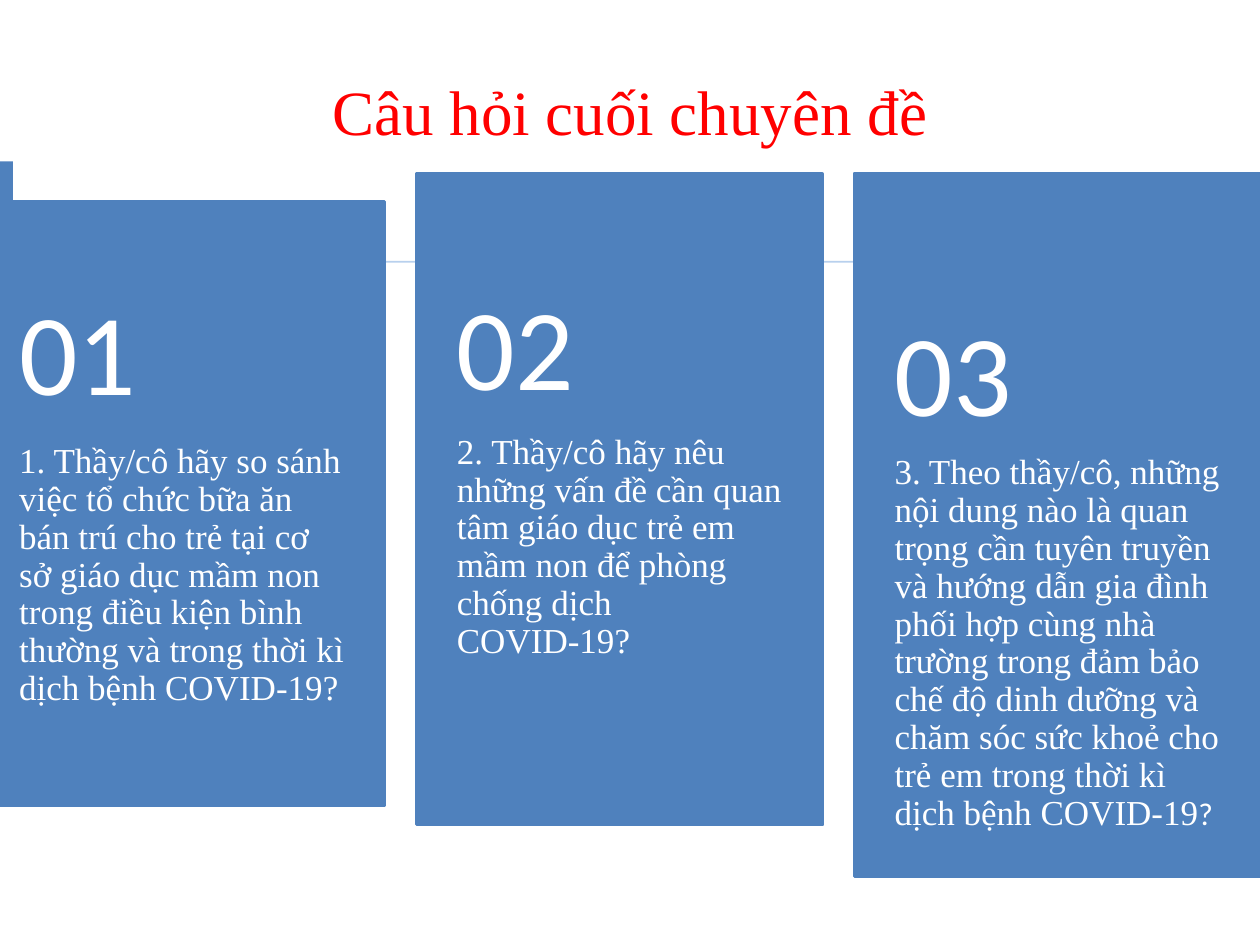
from dataclasses import dataclass

from pptx import Presentation
from pptx.dml.color import RGBColor
from pptx.enum.shapes import MSO_SHAPE
from pptx.enum.text import MSO_ANCHOR, PP_ALIGN
from pptx.slide import Slide
from pptx.text.text import TextFrame, _Run
from pptx.util import Emu, Inches, Pt

RECTANGLE = MSO_SHAPE.RECTANGLE
TOP, MIDDLE = MSO_ANCHOR.TOP, MSO_ANCHOR.MIDDLE
LEFT, CENTER = PP_ALIGN.LEFT, PP_ALIGN.CENTER

COLUMNS, ROWS = 1000, 750
SLIDE_WIDTH, SLIDE_HEIGHT = Inches(10), Inches(7.5)
BLUE, PALE_BLUE, WHITE, RED = "4F81BD", "B8D0ED", "FFFFFF", "FF0000"
SERIF, SANS = "Times New Roman", "Calibri"
CARD_WIDTH, FIRST_CARD, CARD_PITCH = 322, -16.8, 347.4
LEFT_INSET, RIGHT_INSET, NUMBER_INSET, QUESTION_INSET = 32, 31, 18, 36


@dataclass(frozen=True)
class Box:
    column: float
    row: float
    columns: float
    rows: float

    def emu(self) -> tuple[Emu, Emu, Emu, Emu]:
        return across(self.column), down(self.row), across(self.columns), down(self.rows)


@dataclass(frozen=True)
class Card:
    question: str
    top: float
    height: float
    number_top: float
    number_height: float
    question_top: float
    ending: str = ""


CARDS = (
    Card("1. Thầy/cô hãy so sánh việc tổ chức bữa ăn bán trú cho trẻ tại cơ sở giáo dục "
         "mầm non trong điều kiện bình thường và trong thời kì dịch bệnh COVID-19?",
         160, 479, 138, 293, 352),
    Card("2. Thầy/cô hãy nêu những vấn đề cần quan tâm giáo dục trẻ em mầm non "
         "để phòng chống dịch COVID-19?",
         138, 516.5, 203, 154, 344.5),
    Card("3. Theo thầy/cô, những nội dung nào là quan trọng cần tuyên truyền và hướng dẫn "
         "gia đình phối hợp cùng nhà trường trong đảm bảo chế độ dinh dưỡng và chăm sóc "
         "sức khoẻ cho trẻ em trong thời kì dịch bệnh COVID-19",
         138, 557.5, 224, 154, 360.8, "?"),
)


def across(columns: float) -> Emu:
    return Emu(round(SLIDE_WIDTH * columns / COLUMNS))


def down(rows: float) -> Emu:
    return Emu(round(SLIDE_HEIGHT * rows / ROWS))


def color(code: str) -> RGBColor:
    return RGBColor.from_string(code)


def format_run(run: _Run, size: float, font: str, code: str) -> None:
    run.font.size = Pt(size)
    run.font.name = font
    run.font.color.rgb = color(code)


def add_block(slide: Slide, box: Box, fill: str, outlined: bool = False) -> None:
    block = slide.shapes.add_shape(RECTANGLE, *box.emu())
    block.shadow.inherit = False
    block.fill.solid()
    block.fill.fore_color.rgb = color(fill)
    if outlined:
        block.line.color.rgb = color(fill)
        block.line.width = Pt(2)
    else:
        block.line.fill.background()


def add_text(slide: Slide, box: Box, text: str, size: float, font: str,
             anchor: MSO_ANCHOR, top_inset: float, bottom_inset: float) -> TextFrame:
    frame = slide.shapes.add_textbox(*box.emu()).text_frame
    frame.word_wrap = True
    frame.vertical_anchor = anchor
    frame.margin_left, frame.margin_right = across(LEFT_INSET), across(RIGHT_INSET)
    frame.margin_top, frame.margin_bottom = down(top_inset), down(bottom_inset)
    frame.text = text
    paragraph = frame.paragraphs[0]
    paragraph.alignment = LEFT
    paragraph.line_spacing = 0.9
    format_run(paragraph.runs[0], size, font, WHITE)
    return frame


def add_card(slide: Slide, index: int, card: Card) -> None:
    left = FIRST_CARD + index * CARD_PITCH
    add_block(slide, Box(left, card.top, CARD_WIDTH, card.height), BLUE, outlined=True)
    question_height = card.top + card.height - card.question_top
    question = add_text(slide, Box(left, card.question_top, CARD_WIDTH, question_height),
                        card.question, 20, SERIF, TOP, 0, QUESTION_INSET)
    if card.ending:
        ending = question.paragraphs[0].add_run()
        ending.text = card.ending
        format_run(ending, 18, SANS, WHITE)
    add_text(slide, Box(left, card.number_top, CARD_WIDTH, card.number_height),
             f"{index + 1:02}", 66, SANS, MIDDLE, NUMBER_INSET, NUMBER_INSET)


def add_title(slide: Slide, text: str) -> None:
    title = slide.shapes.title
    title.left, title.top, title.width, title.height = Box(68.75, 33.5, 862.5, 108).emu()
    title.text_frame.text = text
    title.text_frame.vertical_anchor = MIDDLE
    heading = title.text_frame.paragraphs[0]
    heading.alignment = CENTER
    format_run(heading.runs[0], 36, SERIF, RED)


def main() -> None:
    deck = Presentation()
    deck.slide_width, deck.slide_height = SLIDE_WIDTH, SLIDE_HEIGHT
    slide = deck.slides.add_slide(deck.slide_layouts.get_by_name("Title Only"))
    add_title(slide, "Câu hỏi cuối chuyên đề")
    add_block(slide, Box(0, 128, 10.4, 52), BLUE)
    add_block(slide, Box(68.75, 207, 862.5, 1.4), PALE_BLUE)
    for index, card in enumerate(CARDS):
        add_card(slide, index, card)
    deck.save("out.pptx")


if __name__ == "__main__":
    main()
